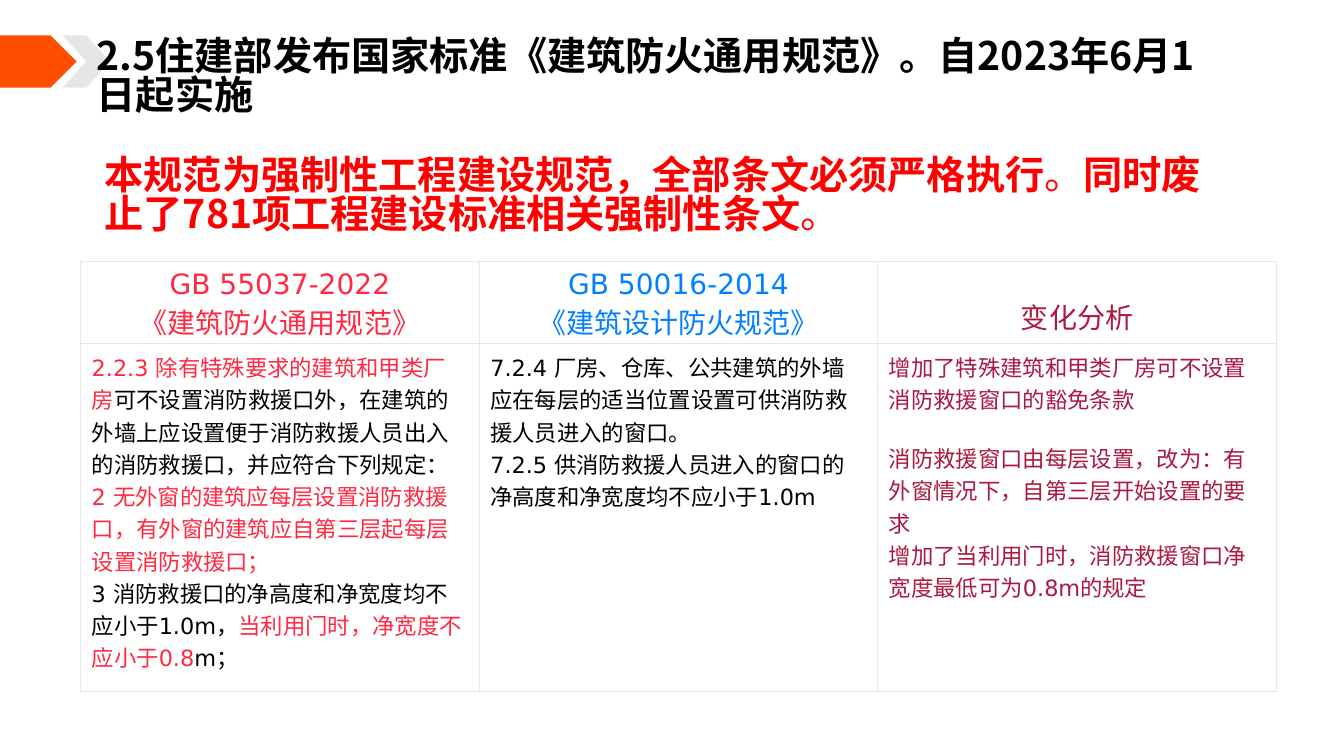
from lxml.etree import SubElement
from pptx import Presentation
from pptx.dml.color import RGBColor
from pptx.enum.shapes import MSO_SHAPE
from pptx.enum.text import MSO_ANCHOR, MSO_AUTO_SIZE, PP_ALIGN
from pptx.oxml.ns import qn
from pptx.util import Emu, Inches, Pt

# Content: each paragraph is a list of (text, colour) runs
BLACK, RED, CRIMSON, BLUE, WINE = "000000", "FF0000", "FF2941", "0080FF", "AB1942"
ORANGE, GREY, BORDER, WHITE = "FF4E00", "E7E6E6", "E8E8E8", "FFFFFF"
CJK_FONT, LATIN_FONT = "Noto Sans CJK SC", "DejaVu Sans"

TITLE = "2.5住建部发布国家标准《建筑防火通用规范》。自2023年6月1日起实施"
SUMMARY = [  # text, bold
    ("本规范为强制性工程建设规范，全部条文必须严格执行", True),
    ("。", False),
    ("同时废止了781项工程建设标准相关强制性条文", True),
    ("。", False),
]
HEADER = [
    [[("GB 55037-2022", CRIMSON)], [("《建筑防火通用规范》", CRIMSON)]],
    [[("GB 50016-2014", BLUE)], [("《建筑设计防火规范》", BLUE)]],
    [[("变化分析", WINE)]],
]
BODY = [
    [
        [("2.2.3 除有特殊要求的建筑和甲类厂房", CRIMSON),
         ("可不设置消防救援口外，在建筑的外墙上应设置便于消防救援人员出入的消防救援口，并应符合下列规定：", BLACK)],
        [("2 无外窗的建筑应每层设置消防救援口，有外窗的建筑应自第三层起每层设置消防救援口；", CRIMSON)],
        [("3 消防救援口的净高度和净宽度均不应小于1.0m，", BLACK),
         ("当利用门时，净宽度不应小于0.8", CRIMSON), ("m；", BLACK)],
    ],
    [
        [("7.2.4 厂房、仓库、公共建筑的外墙应在每层的适当位置设置可供消防救援人员进入的窗口。", BLACK)],
        [("7.2.5 供消防救援人员进入的窗口的净高度和净宽度均不应小于1.0m", BLACK)],
    ],
    [
        [("增加了特殊建筑和甲类厂房可不设置消防救援窗口的豁免条款", WINE)],
        [("消防救援窗口由每层设置，改为：有外窗情况下，自第三层开始设置的要求", WINE)],
        [("增加了当利用门时，消防救援窗口净宽度最低可为0.8m的规定", WINE)],
    ],
]
GAP_BEFORE = {(1, 2, 1): Pt(19)}  # (row, column, paragraph)
ROW_HEIGHTS = [0.82, 3.45]
HEADING_LINE = 0.83


def rgb(color):
    return RGBColor.from_string(color)


def add_run(paragraph, text, color, size, latin, bold=False):
    run = paragraph.add_run()
    run.text = text
    font = run.font
    font.size, font.bold, font.name = Pt(size), bold, latin
    font.color.rgb = rgb(color)
    SubElement(font._element, qn("a:ea"), typeface=CJK_FONT)


def fill_heading(shape, runs, color):
    frame = shape.text_frame
    frame.word_wrap = True
    frame.auto_size = MSO_AUTO_SIZE.SHAPE_TO_FIT_TEXT
    frame.vertical_anchor = MSO_ANCHOR.TOP
    paragraph = frame.paragraphs[0]
    paragraph.alignment = PP_ALIGN.LEFT
    paragraph.line_spacing = HEADING_LINE
    paragraph.space_before = Pt(0)
    for text, bold in runs:
        add_run(paragraph, text, color, 28, CJK_FONT, bold)


def add_marker(kind, left, width, color):
    shape = slide.shapes.add_shape(
        kind, Inches(left), Inches(0.35), Inches(width), Inches(0.52))
    shape.shadow.inherit = False
    shape.fill.solid()
    shape.fill.fore_color.rgb = rgb(color)
    shape.line.fill.background()
    return shape


def set_borders(cell):
    properties = cell._tc.get_or_add_tcPr()
    for index, side in enumerate(("lnL", "lnR", "lnT", "lnB")):
        line = SubElement(properties, qn(f"a:{side}"), w=str(Pt(0.75)))
        fill = SubElement(line, qn("a:solidFill"))
        SubElement(fill, qn("a:srgbClr"), val=BORDER)
        properties.insert(index, line)


def fill_cell(cell, row, column, paragraphs):
    cell.fill.solid()
    cell.fill.fore_color.rgb = rgb(WHITE)
    set_borders(cell)
    cell.margin_left = cell.margin_right = Inches(0.11)
    cell.margin_top = cell.margin_bottom = Inches(0.07)
    cell.vertical_anchor = MSO_ANCHOR.TOP if row else MSO_ANCHOR.BOTTOM
    frame = cell.text_frame
    for index, runs in enumerate(paragraphs):
        paragraph = frame.add_paragraph() if index else frame.paragraphs[0]
        paragraph.alignment = PP_ALIGN.LEFT if row else PP_ALIGN.CENTER
        paragraph.space_before = GAP_BEFORE.get((row, column, index), Pt(0))
        for text, color in runs:
            add_run(paragraph, text, color, 16 if row else 20, LATIN_FONT)


presentation = Presentation()
presentation.slide_width, presentation.slide_height = Inches(13.33), Inches(7.5)
slide = presentation.slides.add_slide(presentation.slide_layouts[5])

# Title, with the grey chevron behind it
title = slide.shapes.title
title.left, title.top, title.width, title.height = map(Inches, (0.86, 0.34, 11.26, 1.04))
fill_heading(title, [(TITLE, True)], BLACK)
chevron = add_marker(MSO_SHAPE.CHEVRON, 0.62, 0.47, GREY)
title.element.addprevious(chevron.element)
add_marker(MSO_SHAPE.PENTAGON, 0, 0.76, ORANGE)

# Red summary
summary = slide.shapes.add_textbox(*map(Inches, (0.94, 1.52, 11.36, 1.04)))
fill_heading(summary, SUMMARY, RED)

# Comparison table
table_width = Inches(11.86)
table = slide.shapes.add_table(
    len(ROW_HEIGHTS), len(HEADER), Inches(0.8), Inches(2.59),
    table_width, Inches(sum(ROW_HEIGHTS))).table
table.first_row = table.horz_banding = False
for column in table.columns:
    column.width = Emu(table_width // len(HEADER))
for row, (height, cells) in enumerate(zip(ROW_HEIGHTS, (HEADER, BODY))):
    table.rows[row].height = Inches(height)
    for column, paragraphs in enumerate(cells):
        fill_cell(table.cell(row, column), row, column, paragraphs)

presentation.save("out.pptx")
